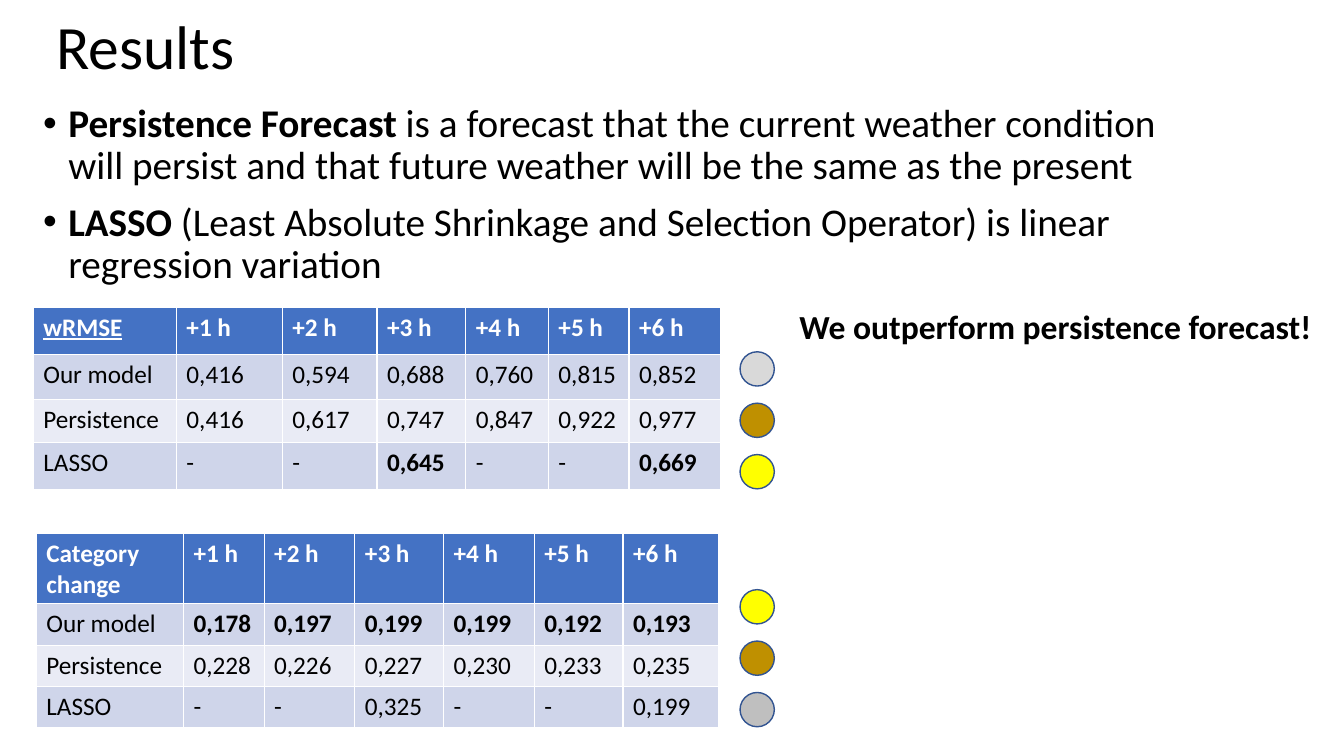
"""Build the results slide comparing three forecast models."""
from dataclasses import dataclass

from lxml import etree
from pptx import Presentation
from pptx.dml.color import RGBColor
from pptx.enum.shapes import MSO_SHAPE
from pptx.enum.text import MSO_ANCHOR
from pptx.oxml.ns import qn
from pptx.util import Inches, Pt

MEDAL_SHAPE = MSO_SHAPE.FLOWCHART_CONNECTOR
MIDDLE, TOP = MSO_ANCHOR.MIDDLE, MSO_ANCHOR.TOP

TITLE = "Results"
DEFINITIONS = [
    [("Persistence Forecast ", True),
     ("is a forecast that the current weather condition will persist "
      "and that future weather will be the same as the present", False)],
    [("LASSO", True),
     (" (Least Absolute Shrinkage and Selection Operator) is linear regression variation", False)],
]
CONCLUSION = "We outperform persistence forecast!"
HOURS = ["+1 h", "+2 h", "+3 h", "+4 h", "+5 h", "+6 h"]
SCORES = [
    {
        "metric": "wRMSE", "underline": True, "winner": "LASSO",
        "corner": (0.33, 3.05),
        "columns": [1.42, 1.05, 0.94, 0.88, 0.82, 0.8, 0.91],
        "rows": [0.47, 0.44, 0.43, 0.47],
        "models": [
            ["Our model", "0,416", "0,594", "0,688", "0,760", "0,815", "0,852"],
            ["Persistence", "0,416", "0,617", "0,747", "0,847", "0,922", "0,977"],
            ["LASSO", "-", "-", "0,645", "-", "-", "0,669"],
        ],
        "medals": ["light_silver", "bronze", "gold"], "medal_top": 3.49,
    },
    {
        "metric": "Category change", "underline": False, "winner": "Our model",
        "corner": (0.36, 5.29),
        "columns": [1.46, 0.8, 0.9, 0.88, 0.9, 0.88, 0.95],
        "rows": [0.7, 0.41, 0.41, 0.41],
        "models": [
            ["Our model", "0,178", "0,197", "0,199", "0,199", "0,192", "0,193"],
            ["Persistence", "0,228", "0,226", "0,227", "0,230", "0,233", "0,235"],
            ["LASSO", "-", "-", "0,325", "-", "-", "0,199"],
        ],
        "medals": ["gold", "bronze", "silver"], "medal_top": 5.85,
    },
]
MEDAL_LEFT, MEDAL_SIZE, MEDAL_STEP = 7.34, 0.34, 0.51


@dataclass(frozen=True)
class Theme:
    font: str = "Calibri"
    title: int = 44
    body: int = 28
    note: int = 24
    cell: int = 18
    ink: str = "000000"
    paper: str = "FFFFFF"
    header: str = "4472C4"
    bands: tuple = ("CFD5EA", "E9EBF5")
    gold: str = "FFFF00"
    bronze: str = "BF9000"
    silver: str = "BFBFBF"
    light_silver: str = "D9D9D9"
    outline: str = "325491"


THEME = Theme()


def add_span(para, text, size, color=THEME.ink, bold=False, underline=False):
    span = para.add_run()
    span.text = text
    font = span.font
    font.name, font.size, font.bold = THEME.font, Pt(size), bold
    font.color.rgb = RGBColor.from_string(color)
    if underline:
        font.underline = True


def add_box(page, left, top, width, height, anchor=TOP):
    box = page.shapes.add_textbox(Inches(left), Inches(top), Inches(width), Inches(height))
    frame = box.text_frame
    frame.word_wrap = True
    frame.vertical_anchor = anchor
    return frame


def add_bullet(para):
    props = para._p.get_or_add_pPr()
    props.set("marL", str(Inches(0.25)))
    props.set("indent", str(Inches(-0.25)))
    etree.SubElement(props, qn("a:buFont"), typeface="Arial")
    etree.SubElement(props, qn("a:buChar"), char="•")


def add_definitions(page):
    frame = add_box(page, 0.33, 0.98, 11.5, 1.98)
    for index, spans in enumerate(DEFINITIONS):
        para = frame.add_paragraph() if index else frame.paragraphs[0]
        para.line_spacing = 0.9
        para.space_before = Pt(10)
        add_bullet(para)
        for text, bold in spans:
            add_span(para, text, THEME.body, bold=bold)


def add_scores(page, score):
    left, top = score["corner"]
    columns, rows = score["columns"], score["rows"]
    table = page.shapes.add_table(
        len(rows), len(columns), Inches(left), Inches(top),
        Inches(sum(columns)), Inches(sum(rows))).table
    for column, width in zip(table.columns, columns):
        column.width = Inches(width)
    lines = [[score["metric"]] + HOURS] + score["models"]
    for r, (line, height) in enumerate(zip(lines, rows)):
        table.rows[r].height = Inches(height)
        header = r == 0
        fill = THEME.header if header else THEME.bands[(r - 1) % 2]
        won = line[0] == score["winner"]
        for c, text in enumerate(line):
            cell = table.cell(r, c)
            cell.fill.solid()
            cell.fill.fore_color.rgb = RGBColor.from_string(fill)
            add_span(cell.text_frame.paragraphs[0], text, THEME.cell,
                     color=THEME.paper if header else THEME.ink,
                     bold=header or (won and c > 0 and text != "-"),
                     underline=header and c == 0 and score["underline"])


def add_medals(page, score):
    for index, metal in enumerate(score["medals"]):
        medal = page.shapes.add_shape(
            MEDAL_SHAPE, Inches(MEDAL_LEFT), Inches(score["medal_top"] + index * MEDAL_STEP),
            Inches(MEDAL_SIZE), Inches(MEDAL_SIZE))
        medal.shadow.inherit = False
        medal.fill.solid()
        medal.fill.fore_color.rgb = RGBColor.from_string(getattr(THEME, metal))
        medal.line.color.rgb = RGBColor.from_string(THEME.outline)
        medal.line.width = Pt(1)


def main():
    deck = Presentation()
    deck.slide_width, deck.slide_height = Inches(13.33), Inches(7.5)
    page = deck.slides.add_slide(deck.slide_layouts[6])
    heading = add_box(page, 0.46, 0, 11.5, 0.98, MIDDLE).paragraphs[0]
    heading.line_spacing = 0.9
    add_span(heading, TITLE, THEME.title)
    add_definitions(page)
    for score in SCORES:
        add_scores(page, score)
        add_medals(page, score)
    conclusion = add_box(page, 7.83, 2.99, 5.36, 0.5).paragraphs[0]
    add_span(conclusion, CONCLUSION, THEME.note, bold=True)
    deck.save("out.pptx")


if __name__ == "__main__":
    main()
